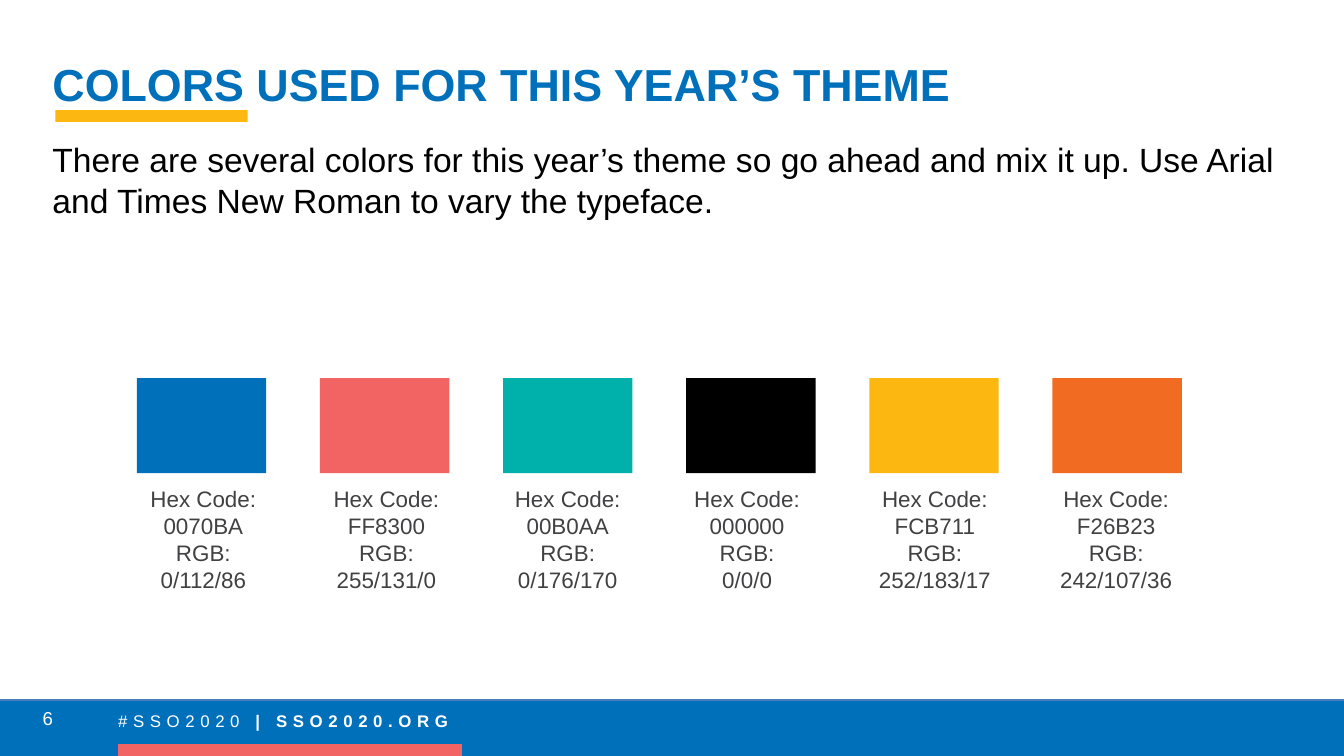
import pptx
import pptx.util
import pptx.dml.color
import pptx.enum.shapes
import pptx.enum.text
import pptx.oxml.ns
from lxml import etree

Pt = pptx.util.Pt
ALIGN = pptx.enum.text.PP_ALIGN
ANCHOR = pptx.enum.text.MSO_ANCHOR

# Content
TITLE = "COLORS USED FOR THIS YEAR’S THEME"
BODY = ("There are several colors for this year’s theme so go ahead and mix it up. "
        "Use Arial and Times New Roman to vary the typeface.")
FOOTER = [("#SSO2020 ", False), ("| SSO2020.ORG", True)]
PAGE_NUMBER = "6"
# Fill, hex code label, RGB label, caption shift from the swatch centre
SWATCHES = [
    ("0070BA", "0070BA", "0/112/86", 1),
    ("F16463", "FF8300", "255/131/0", 1),
    ("00B0AA", "00B0AA", "0/176/170", 0),
    ("000000", "000000", "0/0/0", -2),
    ("FCB711", "FCB711", "252/183/17", 0.5),
    ("F26B23", "F26B23", "242/107/36", -0.5),
]
# Bars: left, top, width, height, fill, line
BARS = [
    (-1.5, 375, 722, 30.3, "0070BB", "4B7EBC"),
    (63.3, 398.7, 184.2, 8, "F16463", None),
    (29.7, 59, 103, 6.4, "FCB711", None),
]

# Swatch grid
FIRST_LEFT, PITCH = 73.3, 98.1
SWATCH_TOP, SWATCH_WIDTH, SWATCH_HEIGHT = 202.5, 69.3, 51
CAPTION_TOP, CAPTION_WIDTH, CAPTION_HEIGHT = 256.3, 78.5, 65.5


def color(value):
    return pptx.dml.color.RGBColor.from_string(value)


def place(shape, left, top, width, height):
    shape.left, shape.top = Pt(left), Pt(top)
    shape.width, shape.height = Pt(width), Pt(height)


def add_bar(slide, left, top, width, height, fill, line=None):
    shape = slide.shapes.add_shape(pptx.enum.shapes.MSO_SHAPE.RECTANGLE,
                                   Pt(left), Pt(top), Pt(width), Pt(height))
    shape.shadow.inherit = False
    shape.fill.solid()
    shape.fill.fore_color.rgb = color(fill)
    if line:
        shape.line.color.rgb = color(line)
        shape.line.width = Pt(0.75)
    else:
        shape.line.fill.background()


def add_run(paragraph, text, size, hex_color, bold=False):
    run = paragraph.add_run()
    run.text = text
    run.font.name = "Arial"
    run.font.size = Pt(size)
    run.font.bold = bold
    run.font.color.rgb = color(hex_color)
    return run


def add_box(slide, left, top, width, height, anchor=ANCHOR.TOP):
    box = slide.shapes.add_textbox(Pt(left), Pt(top), Pt(width), Pt(height))
    box.text_frame.word_wrap = True
    box.text_frame.vertical_anchor = anchor
    return box.text_frame


def fill_placeholder(shape, bounds, anchor, spacing, text, size, hex_color, bold):
    place(shape, *bounds)
    frame = shape.text_frame
    frame.auto_size = pptx.enum.text.MSO_AUTO_SIZE.NONE
    frame.vertical_anchor = anchor
    paragraph = frame.paragraphs[0]
    paragraph.alignment = ALIGN.LEFT
    paragraph.line_spacing = Pt(spacing)
    paragraph.space_before = Pt(0)
    add_run(paragraph, text, size, hex_color, bold)
    return paragraph


def main():
    presentation = pptx.Presentation()
    presentation.slide_width, presentation.slide_height = Pt(720), Pt(405)
    slide = presentation.slides.add_slide(presentation.slide_layouts[1])

    # Title and body
    fill_placeholder(slide.shapes.title, (20.9, 3.6, 514.8, 59), ANCHOR.BOTTOM,
                     23.8, TITLE, 24, "0070BB", True)
    paragraph = fill_placeholder(slide.placeholders[1], (20.9, 70.6, 680.4, 297.4),
                                 ANCHOR.TOP, 21.8, BODY, 18, "000000", False)
    properties = paragraph._p.get_or_add_pPr()
    properties.set("marL", "0")
    properties.set("indent", "0")
    etree.SubElement(properties, pptx.oxml.ns.qn("a:buNone"))

    # Footer band, accent and title underline
    for bar in BARS:
        add_bar(slide, *bar)
    footer = add_box(slide, 56.2, 377.3, 285, 18).paragraphs[0]
    for text, bold in FOOTER:
        run = add_run(footer, text, 9, "FFFFFF", bold)
        run.font._element.set("spc", "300")
    number = add_box(slide, 10.8, 373.7, 29.5, 21.6, ANCHOR.MIDDLE).paragraphs[0]
    number.alignment = ALIGN.CENTER
    add_run(number, PAGE_NUMBER, 10, "FFFFFF")

    # Swatches with captions
    for index, (fill, hex_code, rgb, shift) in enumerate(SWATCHES):
        left = FIRST_LEFT + index * PITCH
        add_bar(slide, left, SWATCH_TOP, SWATCH_WIDTH, SWATCH_HEIGHT, fill)
        caption_left = left + (SWATCH_WIDTH - CAPTION_WIDTH) / 2 + shift
        frame = add_box(slide, caption_left, CAPTION_TOP, CAPTION_WIDTH, CAPTION_HEIGHT)
        for row, text in enumerate(("Hex Code:", hex_code, "RGB:", rgb)):
            paragraph = frame.add_paragraph() if row else frame.paragraphs[0]
            paragraph.alignment = ALIGN.CENTER
            paragraph.line_spacing = Pt(14.5)
            add_run(paragraph, text, 12, "414042")

    presentation.save("out.pptx")


if __name__ == "__main__":
    main()
